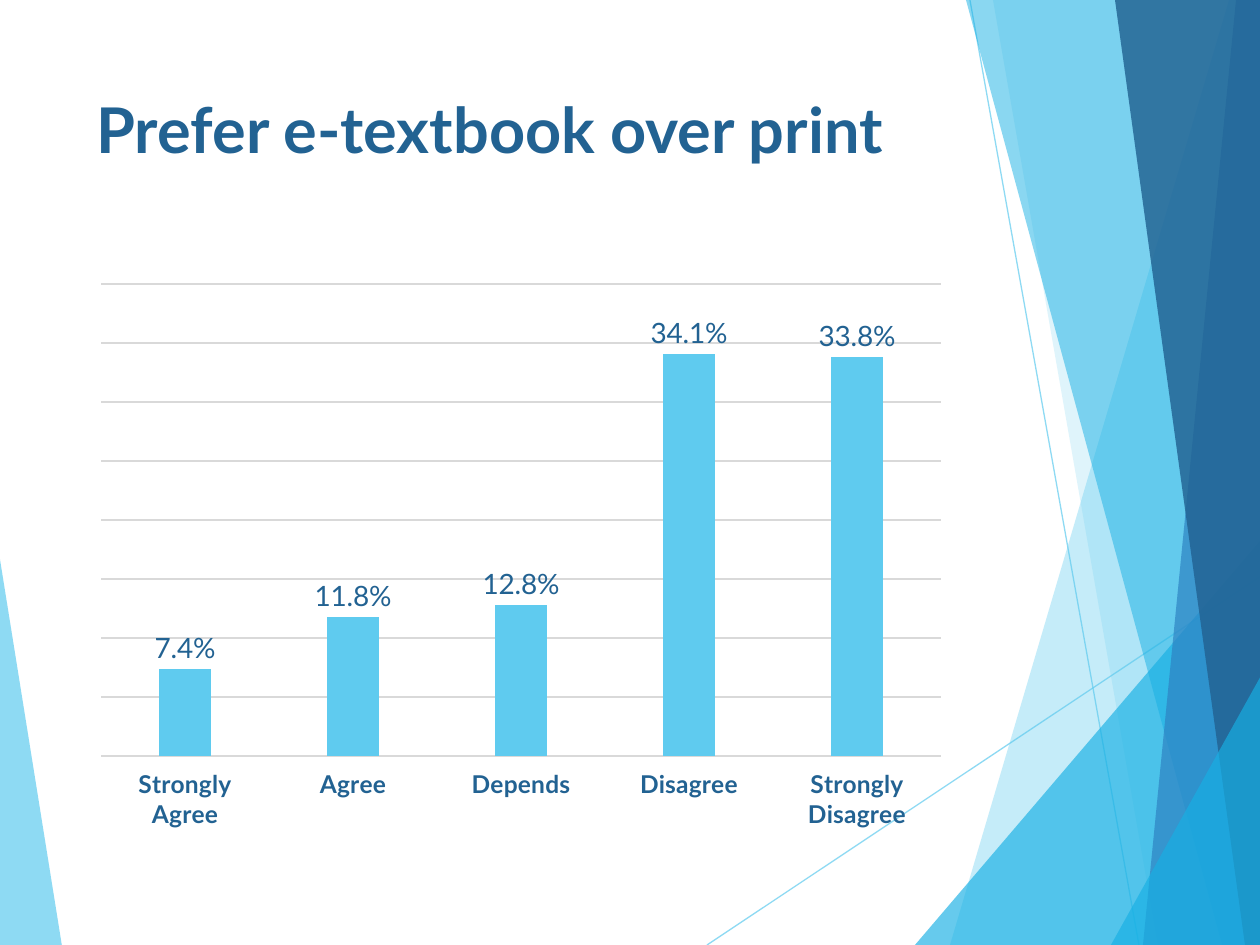
from dataclasses import dataclass

from lxml.etree import SubElement
from pptx import Presentation
from pptx.chart.data import CategoryChartData
from pptx.dml.color import RGBColor
from pptx.enum.chart import XL_CHART_TYPE, XL_LABEL_POSITION, XL_TICK_LABEL_POSITION, XL_TICK_MARK
from pptx.enum.shapes import MSO_CONNECTOR
from pptx.enum.text import MSO_ANCHOR
from pptx.oxml import parse_xml
from pptx.oxml.ns import nsdecls, qn
from pptx.util import Emu, Pt

EMU_PER_PX = 914400 / 126
WIDTH, HEIGHT = 1260, 945


@dataclass(frozen=True)
class Theme:
    font: str = "Lato"
    sky: str = "5FCBEF"
    cyan: str = "17B0E4"
    blue: str = "2E83C3"
    navy: str = "226292"
    grid: str = "D9D9D9"
    title_size: int = 36
    label_size: int = 16
    category_size: int = 14
    line_width: float = 0.75


THEME = Theme()

# Each facet: corner points, colour, opacity in percent
FACETS_BEHIND_LINES = [
    ([(-1, 553), (62, 946), (-1, 945)], THEME.sky, 70),
]
RIGHT_EDGE = [(WIDTH, HEIGHT), (WIDTH, 0)]
FACETS = [
    ([(1229, 0), (950, HEIGHT), *RIGHT_EDGE], THEME.sky, 36),
    ([(993, 0), (1158, HEIGHT), *RIGHT_EDGE], THEME.sky, 20),
    ([(915, HEIGHT), (WIDTH, 541), (WIDTH, HEIGHT)], THEME.cyan, 66),
    ([(966, 0), (1222, HEIGHT), *RIGHT_EDGE], THEME.cyan, 50),
    ([(1236, 0), (1143, HEIGHT), *RIGHT_EDGE], THEME.blue, 70),
    ([(1115, 0), (1245, HEIGHT), *RIGHT_EDGE], THEME.navy, 82),
    ([(1111, HEIGHT), (1262, 674), (1262, HEIGHT)], THEME.cyan, 66),
]
THIN_LINES = [((707, HEIGHT), (1261, 576)), ((970, 0), (1139, HEIGHT))]

RESPONSES = {
    "Strongly Agree": 0.074,
    "Agree": 0.118,
    "Depends": 0.128,
    "Disagree": 0.341,
    "Strongly Disagree": 0.338,
}
CHART_BOX = (84, 273, 874, 559)
PLOT_BOX = (101, 284, 840, 472)


def px(length):
    return Emu(round(length * EMU_PER_PX))


def set_opacity(fill, percent):
    """Add an alpha value to the solid colour of a fill."""
    color = fill._xPr.find(qn("a:solidFill"))[0]
    SubElement(color, qn("a:alpha")).set("val", str(percent * 1000))


def add_facet(page, points, color, opacity):
    builder = page.shapes.build_freeform(*points[0], scale=EMU_PER_PX)
    builder.add_line_segments(points[1:], close=True)
    facet = builder.convert_to_shape()
    facet.shadow.inherit = False
    facet.line.fill.background()
    facet.fill.solid()
    facet.fill.fore_color.rgb = RGBColor.from_string(color)
    set_opacity(facet.fill, opacity)


def add_thin_line(page, start, end):
    line = page.shapes.add_connector(
        MSO_CONNECTOR.STRAIGHT, *map(px, start), *map(px, end))
    line.line.width = Pt(THEME.line_width)
    line.line.color.rgb = RGBColor.from_string(THEME.sky)
    set_opacity(line.line.fill, 70)
    SubElement(line._element.spPr, qn("a:effectLst"))


def format_font(font, size, color, bold=False):
    font.name = THEME.font
    font.size = Pt(size)
    font.bold = bold
    font.color.rgb = RGBColor.from_string(color)


def add_text(page, text, bounds, *, size, color, bold=False, anchor=MSO_ANCHOR.TOP):
    box = page.shapes.add_textbox(*map(px, bounds))
    frame = box.text_frame
    frame.word_wrap = True
    frame.vertical_anchor = anchor
    span = frame.paragraphs[0].add_run()
    span.text = text
    format_font(span.font, size, color, bold)


def format_grid_line(line):
    line.width = Pt(THEME.line_width)
    line.color.rgb = RGBColor.from_string(THEME.grid)


def place_plot(chart):
    """Fix the inner plot area at PLOT_BOX, as fractions of CHART_BOX."""
    left, top, width, height = CHART_BOX
    plot_left, plot_top, plot_width, plot_height = PLOT_BOX
    fractions = {
        "x": (plot_left - left) / width,
        "y": (plot_top - top) / height,
        "w": plot_width / width,
        "h": plot_height / height,
    }
    modes = '<c:xMode val="edge"/><c:yMode val="edge"/>'
    values = "".join(f'<c:{name} val="{value:.4f}"/>' for name, value in fractions.items())
    layout = parse_xml(
        f'<c:layout {nsdecls("c")}><c:manualLayout><c:layoutTarget val="inner"/>'
        f'{modes}{values}</c:manualLayout></c:layout>')
    plot_area = chart._chartSpace.chart.plotArea
    for old_layout in plot_area.findall(qn("c:layout")):
        plot_area.remove(old_layout)
    plot_area.insert(0, layout)


def add_response_chart(page):
    data = CategoryChartData(number_format="0.0%")
    data.categories = list(RESPONSES)
    data.add_series("Series 1", list(RESPONSES.values()))
    chart = page.shapes.add_chart(
        XL_CHART_TYPE.COLUMN_CLUSTERED, *map(px, CHART_BOX), data).chart
    chart.has_legend = False
    chart.has_title = False
    chart.font.name = THEME.font
    place_plot(chart)

    plot = chart.plots[0]
    plot.vary_by_categories = False
    plot.gap_width = 219
    plot.overlap = -27
    bars = plot.series[0].format.fill
    bars.solid()
    bars.fore_color.rgb = RGBColor.from_string(THEME.sky)

    plot.has_data_labels = True
    labels = plot.data_labels
    labels.show_value = True
    labels.number_format = "0.0%"
    labels.number_format_is_linked = False
    labels.position = XL_LABEL_POSITION.OUTSIDE_END
    format_font(labels.font, THEME.label_size, THEME.navy)

    categories = chart.category_axis
    categories.major_tick_mark = XL_TICK_MARK.NONE
    categories.tick_label_position = XL_TICK_LABEL_POSITION.LOW
    format_font(categories.tick_labels.font, THEME.category_size, THEME.navy, bold=True)
    format_grid_line(categories.format.line)

    values = chart.value_axis
    values.visible = False
    values.minimum_scale, values.maximum_scale, values.major_unit = 0, 0.4, 0.05
    values.has_major_gridlines = True
    format_grid_line(values.major_gridlines.format.line)


def main():
    deck = Presentation()
    deck.slide_width, deck.slide_height = px(WIDTH), px(HEIGHT)
    page = deck.slides.add_slide(deck.slide_layouts[6])
    for facet in FACETS_BEHIND_LINES:
        add_facet(page, *facet)
    for ends in THIN_LINES:
        add_thin_line(page, *ends)
    for facet in FACETS:
        add_facet(page, *facet)
    add_text(page, "Prefer e-textbook over print", (84, 84, 874, 181),
             size=THEME.title_size, color=THEME.navy, bold=True)
    add_response_chart(page)
    deck.save("out.pptx")


if __name__ == "__main__":
    main()
